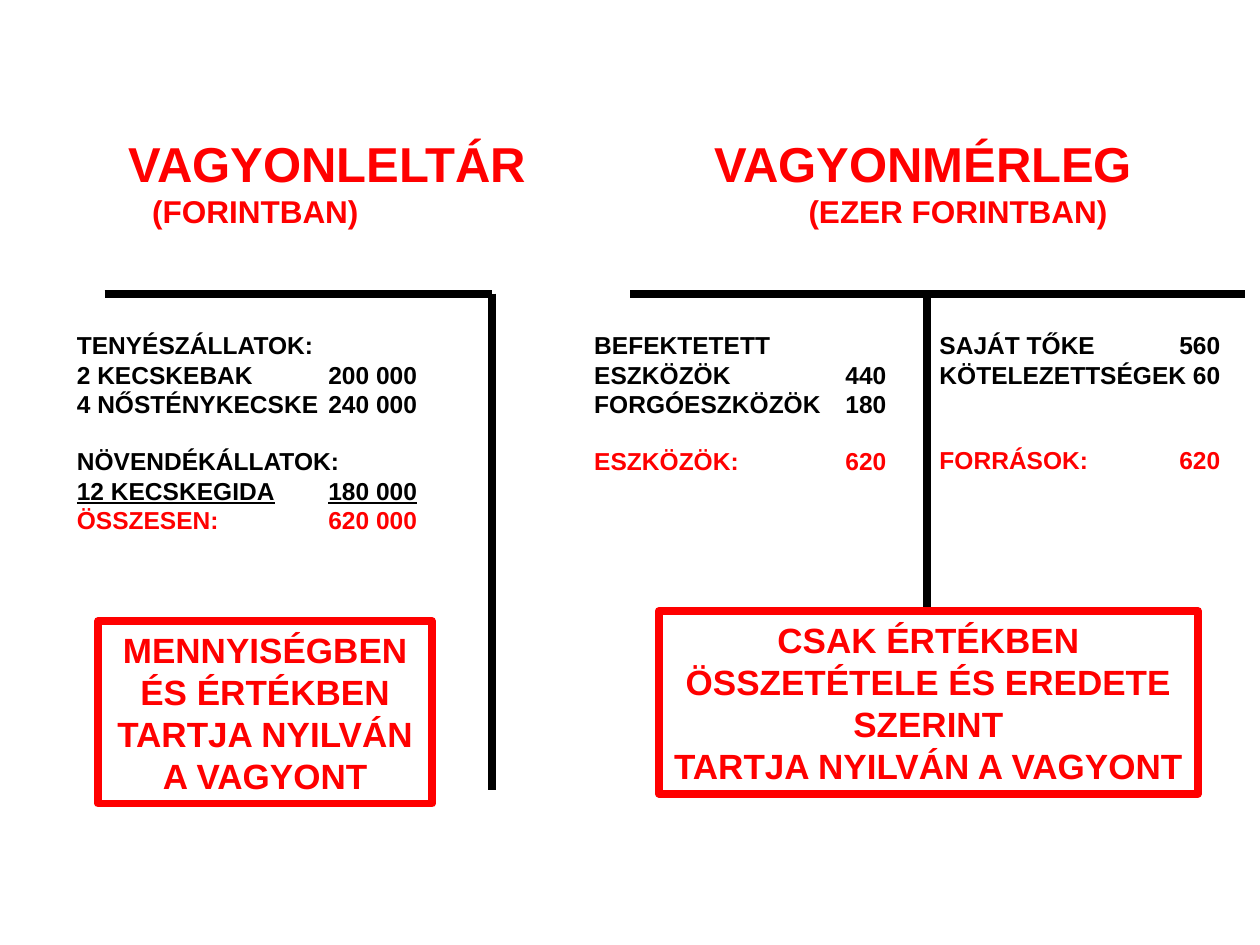
from lxml import etree
from pptx import Presentation
from pptx.dml.color import RGBColor
from pptx.enum.shapes import MSO_CONNECTOR, MSO_SHAPE
from pptx.enum.text import MSO_ANCHOR, PP_ALIGN
from pptx.oxml.ns import qn
from pptx.util import Cm, Pt

LINE, RECT = MSO_CONNECTOR.STRAIGHT, MSO_SHAPE.RECTANGLE
TOP, MIDDLE, BOTTOM = MSO_ANCHOR.TOP, MSO_ANCHOR.MIDDLE, MSO_ANCHOR.BOTTOM
LEFT, CENTER = PP_ALIGN.LEFT, PP_ALIGN.CENTER
RED, BLACK, WHITE = "FF0000", "000000", "FFFFFF"
GAP = 16  # height of one skipped row, in points


def color(code):
    return RGBColor.from_string(code)


def style(item, values):
    for name, value in values.items():
        setattr(item, name, value)


def set_tabs(para, stops):
    """Add tab stops given as (position in cm, alignment)."""
    tabs = etree.SubElement(para._p.get_or_add_pPr(), qn("a:tabLst"))
    for pos, side in stops:
        etree.SubElement(tabs, qn("a:tab"), pos=str(int(Cm(pos))), algn=side)


def write(para, text, size, tint=BLACK, align=LEFT, before=0, under=False):
    style(para, {"alignment": align, "space_before": Pt(before)})
    run = para.add_run()
    run.text = text
    style(run.font, {"name": "Arial", "size": Pt(size), "bold": True,
                     "underline": under})
    run.font.color.rgb = color(tint)


def paras(frame, count):
    return [frame.paragraphs[0]] + [frame.add_paragraph() for _ in range(count - 1)]


def add_line(slide, x1, y1, x2, y2):
    line = slide.shapes.add_connector(LINE, Cm(x1), Cm(y1), Cm(x2), Cm(y2))
    line.line.color.rgb = color(BLACK)
    line.line.width = Pt(4.5)
    etree.SubElement(line._element.spPr, qn("a:effectLst"))


def add_heads(slide, box):
    """Two heading lines, each reaching over both accounts."""
    frame = slide.shapes.add_textbox(*map(Cm, box)).text_frame
    style(frame, {"word_wrap": True, "vertical_anchor": BOTTOM, "margin_bottom": 0})
    heads = [
        ("VAGYONLELTÁR", "VAGYONMÉRLEG", 28, (1.07, 12.88)),
        ("(FORINTBAN)", "(EZER FORINTBAN)", 18, (1.55, 14.78)),
    ]
    for para, (left, right, size, stops) in zip(paras(frame, len(heads)), heads):
        write(para, f"\t{left}\t{right}", size, RED)
        set_tabs(para, [(pos, "l") for pos in stops])


def add_rows(slide, box, tab, rows):
    """Entries with their amounts flush right at the tab."""
    frame = slide.shapes.add_textbox(*map(Cm, box)).text_frame
    style(frame, {"word_wrap": True, "vertical_anchor": TOP})
    for para, (text, form) in zip(paras(frame, len(rows)), rows):
        write(para, text, 14, **form)
        set_tabs(para, [(tab, "r")])


def add_note(slide, box, lines, fill):
    note = slide.shapes.add_shape(RECT, *map(Cm, box))
    note.shadow.inherit = False
    if fill:
        note.fill.solid()
        note.fill.fore_color.rgb = color(fill)
    else:
        note.fill.background()
    note.line.color.rgb = color(RED)
    note.line.width = Pt(4.5)
    frame = note.text_frame
    style(frame, {"word_wrap": False, "vertical_anchor": MIDDLE})
    for para, text in zip(paras(frame, len(lines)), lines):
        write(para, text, 20, RED, CENTER)


def add_account(slide, box, start, stem, cols, note):
    """One account: rule, stem, columns of entries and a framed note."""
    x, y, w, h = box
    add_line(slide, x + start, y, x + w, y)
    add_line(slide, x + stem, y, x + stem, y + h)
    for dx, width, height, tab, rows in cols:
        add_rows(slide, (x + dx, y + 0.61, width, height), tab, rows)
    dx, dy, width, lines, fill = note
    add_note(slide, (x + dx, y + dy, width, 3.68), lines, fill)


def main():
    deck = Presentation()
    deck.slide_width, deck.slide_height = Cm(25.4), Cm(19.05)
    slide = deck.slides.add_slide(deck.slide_layouts[6])
    add_heads(slide, (1.27, 1.35, 22.86, 3.28))

    # Inventory on the left
    stock = [
        ("TENYÉSZÁLLATOK:", {}),
        ("2 KECSKEBAK\t200 000", {}),
        ("4 NŐSTÉNYKECSKE\t240 000", {}),
        ("NÖVENDÉKÁLLATOK:", {"before": GAP}),
        ("12 KECSKEGIDA\t180 000", {"under": True}),
        ("ÖSSZESEN:\t620 000", {"tint": RED}),
    ]
    add_account(
        slide, (1.3, 5.92, 8.61, 10.01), 0.81, 8.61,
        [(0, 7.44, 4.45, 6.86, stock)],
        (0.68, 6.6, 6.73, ["MENNYISÉGBEN", "ÉS ÉRTÉKBEN",
                           "TARTJA NYILVÁN", "A VAGYONT"], None))

    # Balance sheet on the right
    assets = [
        ("BEFEKTETETT", {}),
        ("ESZKÖZÖK\t440", {}),
        ("FORGÓESZKÖZÖK\t180", {}),
        ("ESZKÖZÖK:\t620", {"tint": RED, "before": GAP}),
    ]
    funds = [
        ("SAJÁT TŐKE\t560", {}),
        ("KÖTELEZETTSÉGEK\t60", {}),
        ("FORRÁSOK:\t620", {"tint": RED, "before": 2 * GAP}),
    ]
    add_account(
        slide, (11.73, 5.92, 13.37, 10.01), 0.97, 6.96,
        [(0, 6.6, 3.25, 5.89, assets), (6.96, 6.35, 3.25, 5.66, funds)],
        (1.55, 6.4, 10.87, ["CSAK ÉRTÉKBEN", "ÖSSZETÉTELE ÉS EREDETE", "SZERINT",
                            "TARTJA NYILVÁN A VAGYONT"], WHITE))
    deck.save("out.pptx")


if __name__ == "__main__":
    main()
